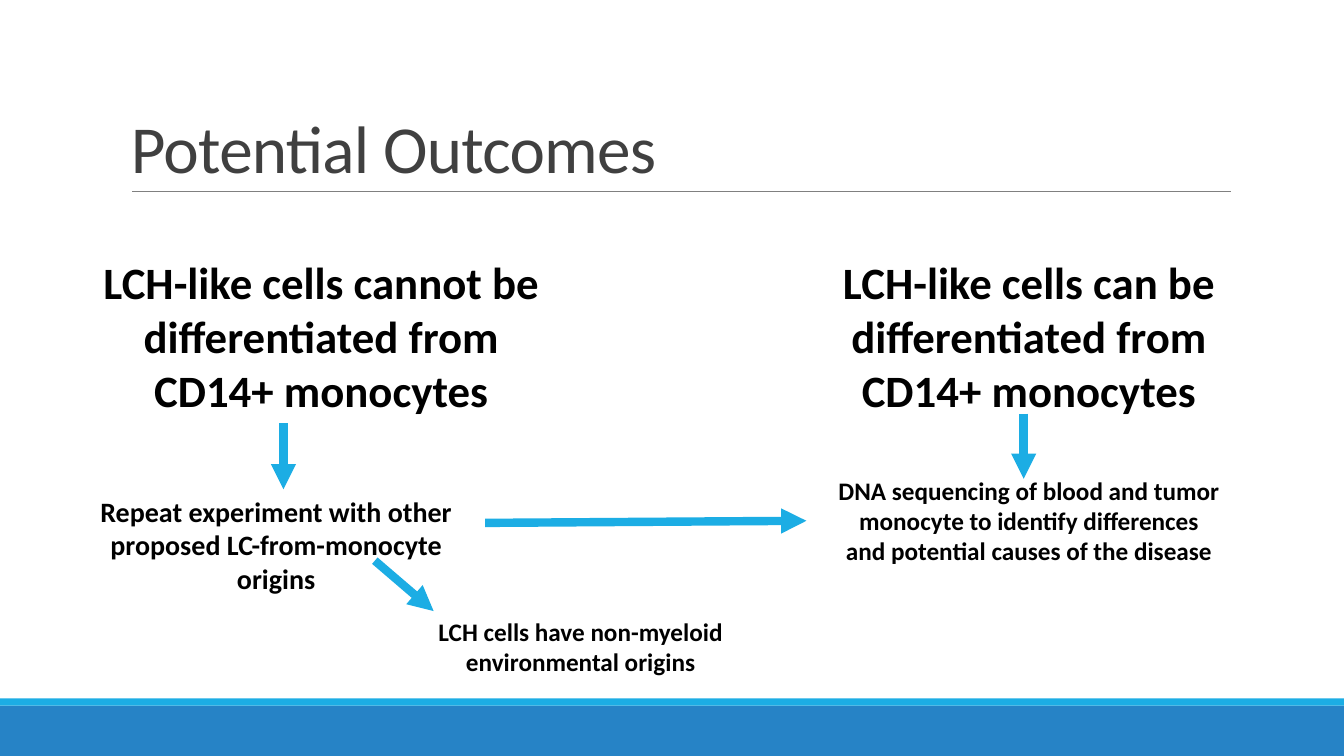
from lxml.etree import SubElement
from pptx import Presentation
from pptx.dml.color import RGBColor
from pptx.enum.shapes import MSO_CONNECTOR, MSO_SHAPE
from pptx.enum.text import MSO_ANCHOR, MSO_AUTO_SIZE, PP_ALIGN
from pptx.oxml.ns import qn
from pptx.util import Pt

EMU_PER_PX = 9525
WIDTH, HEIGHT = 1280, 720
FONT = "Calibri"
SKY, BLUE, GRAY, CHARCOAL, BLACK = "1CADE4", "2683C6", "808080", "404040", "000000"


def px(*lengths):
    """Turn pixel lengths into a list of EMU."""
    return [length * EMU_PER_PX for length in lengths]


def paint(color_format, hex_color):
    """Set a colour format from a hex string."""
    color_format.rgb = RGBColor.from_string(hex_color)


def style(paragraph, size, color, bold, align):
    """Format a paragraph and its runs."""
    paragraph.alignment = align
    for run in paragraph.runs:
        run.font.name = FONT
        run.font.size = Pt(size)
        run.font.bold = bold
        paint(run.font.color, color)


def add_bar(slide, left, top, width, height, color):
    """Draw a plain filled bar."""
    bar = slide.shapes.add_shape(MSO_SHAPE.RECTANGLE, *px(left, top, width, height))
    bar.shadow.inherit = False
    bar.fill.solid()
    paint(bar.fill.fore_color, color)
    bar.line.fill.background()


def add_line(slide, start, end, color, weight, arrow=False):
    """Draw a straight line, with an optional arrowhead at its end."""
    line = slide.shapes.add_connector(MSO_CONNECTOR.STRAIGHT, *px(*start, *end))
    paint(line.line.color, color)
    line.line.width = Pt(weight)
    if arrow:
        SubElement(line.line._get_or_add_ln(), qn("a:tailEnd"), type="triangle")
    SubElement(line._element.spPr, qn("a:effectLst"))


def add_statement(slide, left, top, width, height, words, size):
    """Place a bold centred statement with a left indent."""
    box = slide.shapes.add_textbox(*px(left, top, width, height))
    box.text_frame.word_wrap = True
    box.text_frame.text = words
    paragraph = box.text_frame.paragraphs[0]
    style(paragraph, size, BLACK, True, PP_ALIGN.CENTER)
    paragraph._p.get_or_add_pPr().set("marL", str(px(21)[0]))


def add_heading(slide, left, top, width, height):
    """Place the title with the rule beneath it."""
    title = slide.shapes.title
    title.left, title.top, title.width, title.height = px(left, top, width, height)
    frame = title.text_frame
    frame.text = "Potential Outcomes"
    frame.auto_size = MSO_AUTO_SIZE.NONE
    frame.vertical_anchor = MSO_ANCHOR.BOTTOM
    paragraph = frame.paragraphs[0]
    paragraph.line_spacing = 0.85
    style(paragraph, 48, CHARCOAL, False, PP_ALIGN.LEFT)
    paragraph.runs[0]._r.get_or_add_rPr().set("spc", "-50")
    rule = top + height - 1
    add_line(slide, (left + 11, rule), (left + width + 1, rule), GRAY, 0.5)


def add_footer(slide, left, top, width, height):
    """Draw the footer band with its thin upper strip."""
    strip = 7
    add_bar(slide, left, top + strip, width, height - strip, BLUE)
    add_bar(slide, left, top, width, strip, SKY)


def add_negative_branch(slide, left, top):
    """Place the outcome without differentiation and its follow-ups."""
    add_statement(slide, left + 16, top, 457, 165,
                  "LCH-like cells cannot be differentiated from CD14+ monocytes", 32)
    add_statement(slide, left, top + 228, 403, 107,
                  "Repeat experiment with other proposed LC-from-monocyte origins", 20)
    add_statement(slide, left + 290, top + 344, 403, 68,
                  "LCH cells have non-myeloid environmental origins", 18)
    for start, end in (((219, 165), (219, 228)),
                       ((306, 296), (362, 344)),
                       ((411, 260), (717, 258))):
        add_line(slide, (left + start[0], top + start[1]),
                 (left + end[0], top + end[1]), SKY, 6, arrow=True)


def add_positive_branch(slide, left, top):
    """Place the outcome with differentiation and its follow-up."""
    add_statement(slide, left, top, 403, 165,
                  "LCH-like cells can be differentiated from CD14+ monocytes", 32)
    add_line(slide, (left + 207, top + 156), (left + 207, top + 218), SKY, 6, arrow=True)
    add_statement(slide, left, top + 210, 403, 97,
                  "DNA sequencing of blood and tumor monocyte to identify differences "
                  "and potential causes of the disease", 18)


def main():
    """Build and save the slide."""
    deck = Presentation()
    deck.slide_width, deck.slide_height = px(WIDTH, HEIGHT)
    slide = deck.slides.add_slide(deck.slide_layouts[5])
    add_footer(slide, 0, 665, WIDTH, 55)
    add_heading(slide, 115, 30, 1056, 153)
    add_negative_branch(slide, 51, 238)
    add_positive_branch(slide, 768, 238)
    deck.save("out.pptx")


if __name__ == "__main__":
    main()
